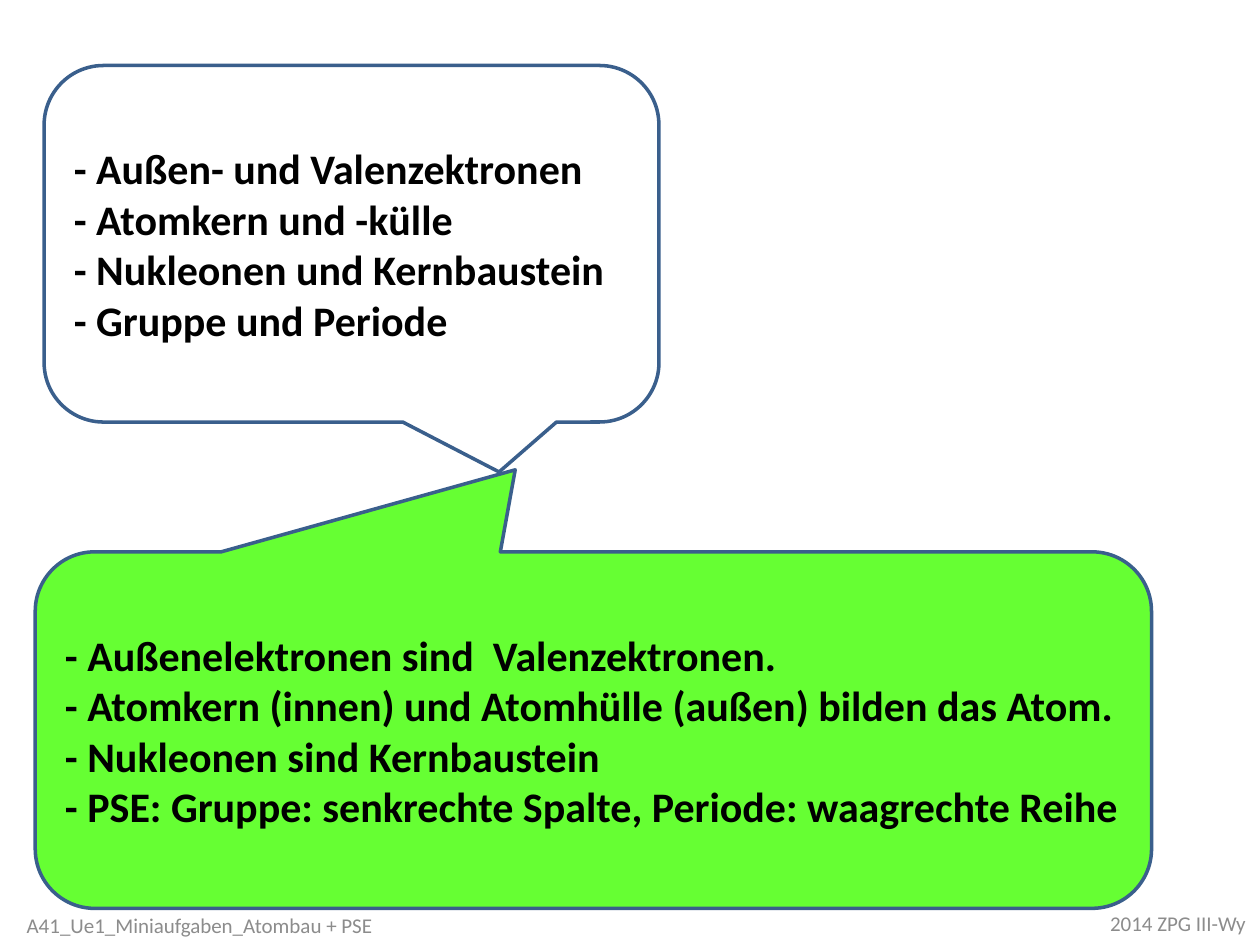
from pptx import Presentation
from pptx.dml.color import RGBColor
from pptx.enum.shapes import MSO_SHAPE
from pptx.enum.text import MSO_ANCHOR, PP_ALIGN
from pptx.util import Inches, Pt

TERM_PAIRS = [
    "- Außen- und Valenzektronen",
    "- Atomkern und -külle",
    "- Nukleonen und Kernbaustein",
    "- Gruppe und Periode",
]
EXPLANATIONS = [
    "- Außenelektronen sind  Valenzektronen.",
    "- Atomkern (innen) und Atomhülle (außen) bilden das Atom.",
    "- Nukleonen sind Kernbaustein",
    "- PSE: Gruppe: senkrechte Spalte, Periode: waagrechte Reihe",
]


def color(value):
    return RGBColor.from_string(value)


def write_text(shape, lines, size, text_color, alignment, bold=False):
    frame = shape.text_frame
    frame.word_wrap = True
    frame.vertical_anchor = MSO_ANCHOR.MIDDLE
    frame.text = "\n".join(lines)
    for paragraph in frame.paragraphs:
        paragraph.alignment = alignment
        for span in paragraph.runs:
            span.font.name = "Calibri"
            span.font.size = Pt(size)
            span.font.bold = bold
            span.font.color.rgb = color(text_color)


def add_callout(page, left, top, width, height, tip, fill, lines):
    callout = page.shapes.add_shape(
        MSO_SHAPE.ROUNDED_RECTANGULAR_CALLOUT,
        Inches(left), Inches(top), Inches(width), Inches(height))
    callout.shadow.inherit = False
    callout.adjustments[0], callout.adjustments[1] = tip
    callout.fill.solid()
    callout.fill.fore_color.rgb = color(fill)
    callout.line.color.rgb = color("3A5F8C")
    callout.line.width = Pt(2)
    write_text(callout, lines, 24, "000000", PP_ALIGN.LEFT, bold=True)


def add_footer(page, left, top, width, text):
    box = page.shapes.add_textbox(
        Inches(left), Inches(top), Inches(width), Inches(0.4))
    write_text(box, [text], 12, "8C8C8C", PP_ALIGN.CENTER)


def main():
    deck = Presentation()
    deck.slide_width = Inches(10)
    deck.slide_height = Inches(7.5)
    page = deck.slides.add_slide(deck.slide_layouts[6])
    add_callout(page, 0.35, 0.52, 4.88, 2.83, (0.24, 0.64), "FFFFFF", TERM_PAIRS)
    add_callout(page, 0.28, 4.38, 8.86, 2.83, (-0.07, -0.73), "66FF33", EXPLANATIONS)
    add_footer(page, 8.7, 7.13, 1.3, "2014 ZPG III-Wy")
    add_footer(page, 0, 7.14, 3.17, "A41_Ue1_Miniaufgaben_Atombau + PSE")
    deck.save("out.pptx")


if __name__ == "__main__":
    main()
